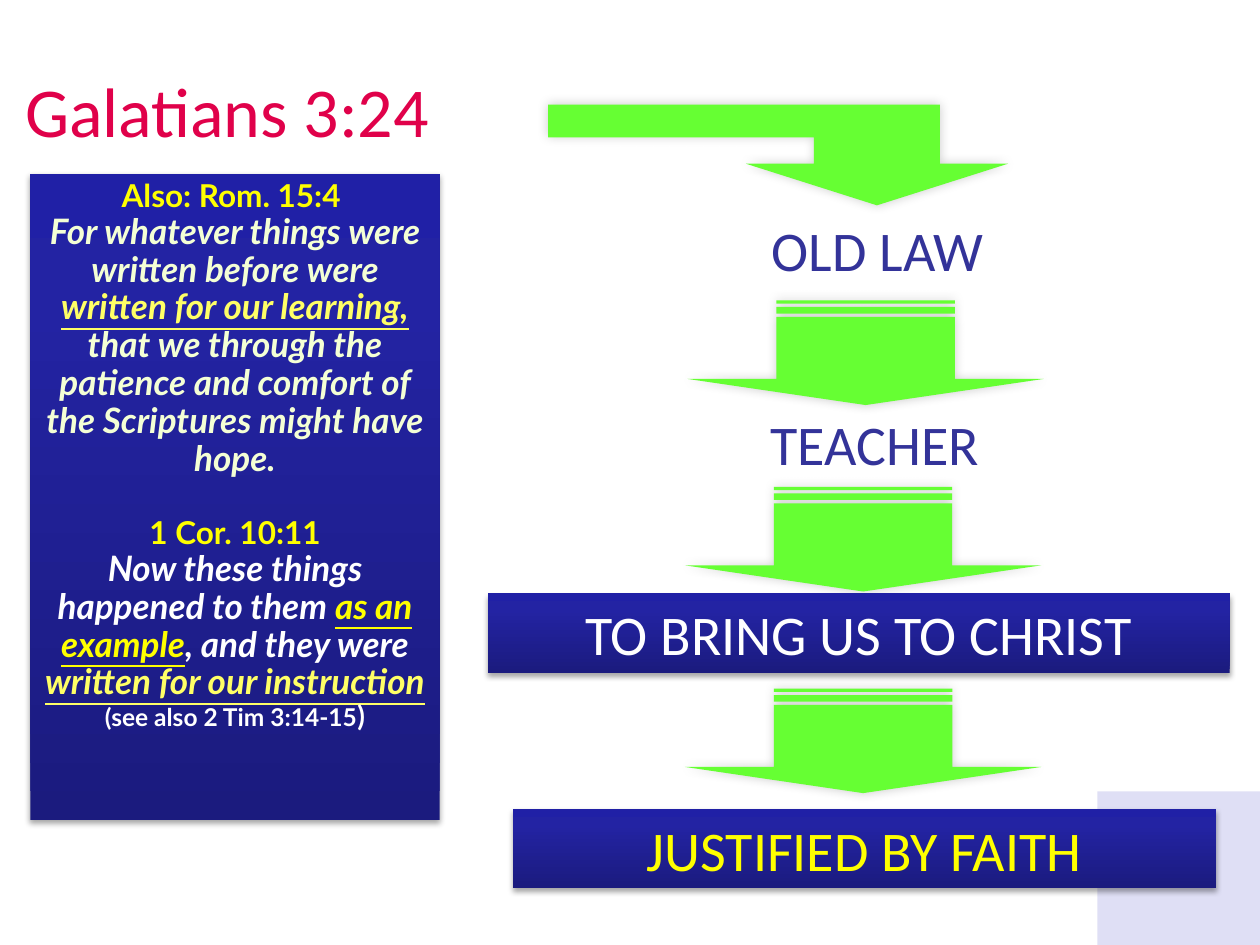
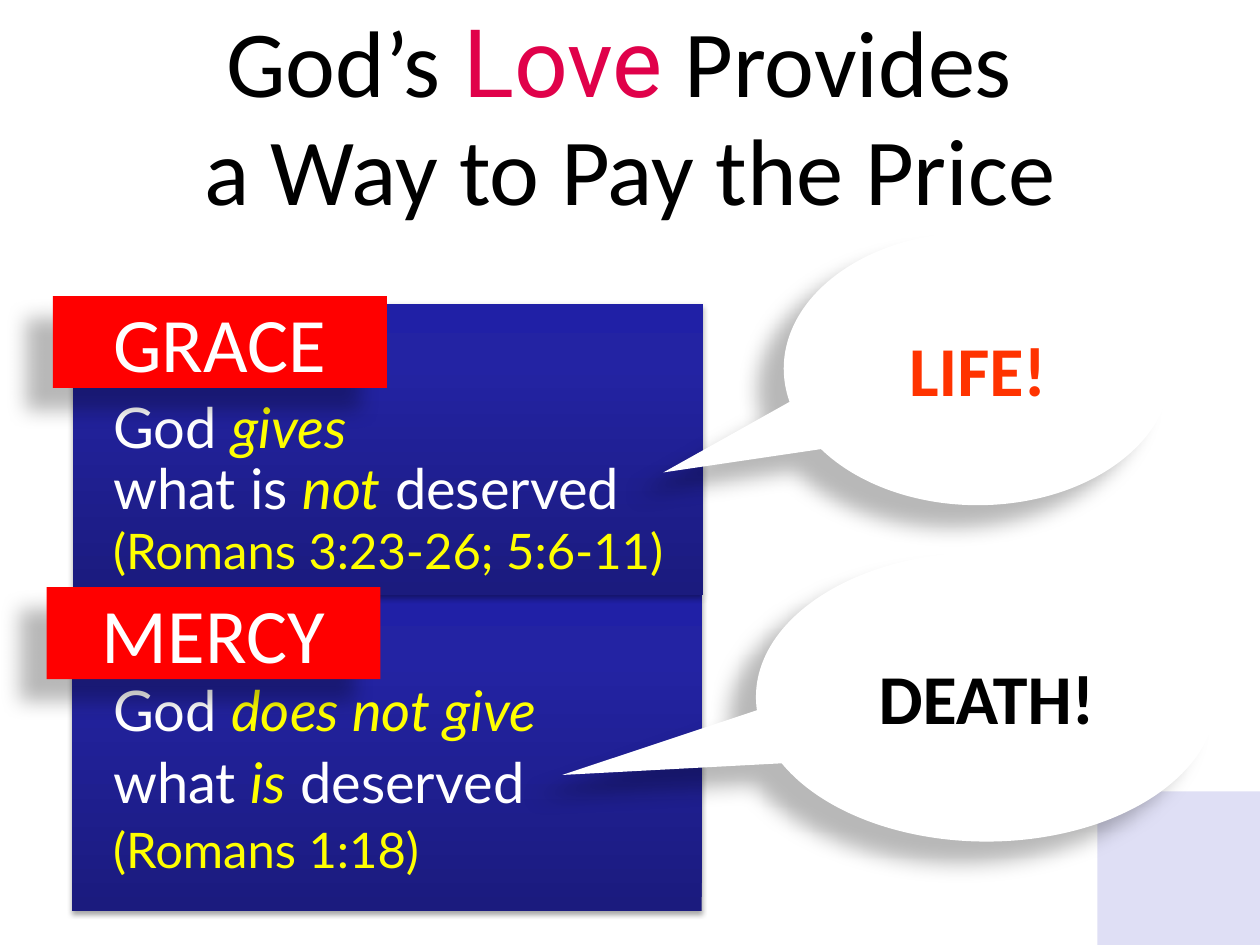
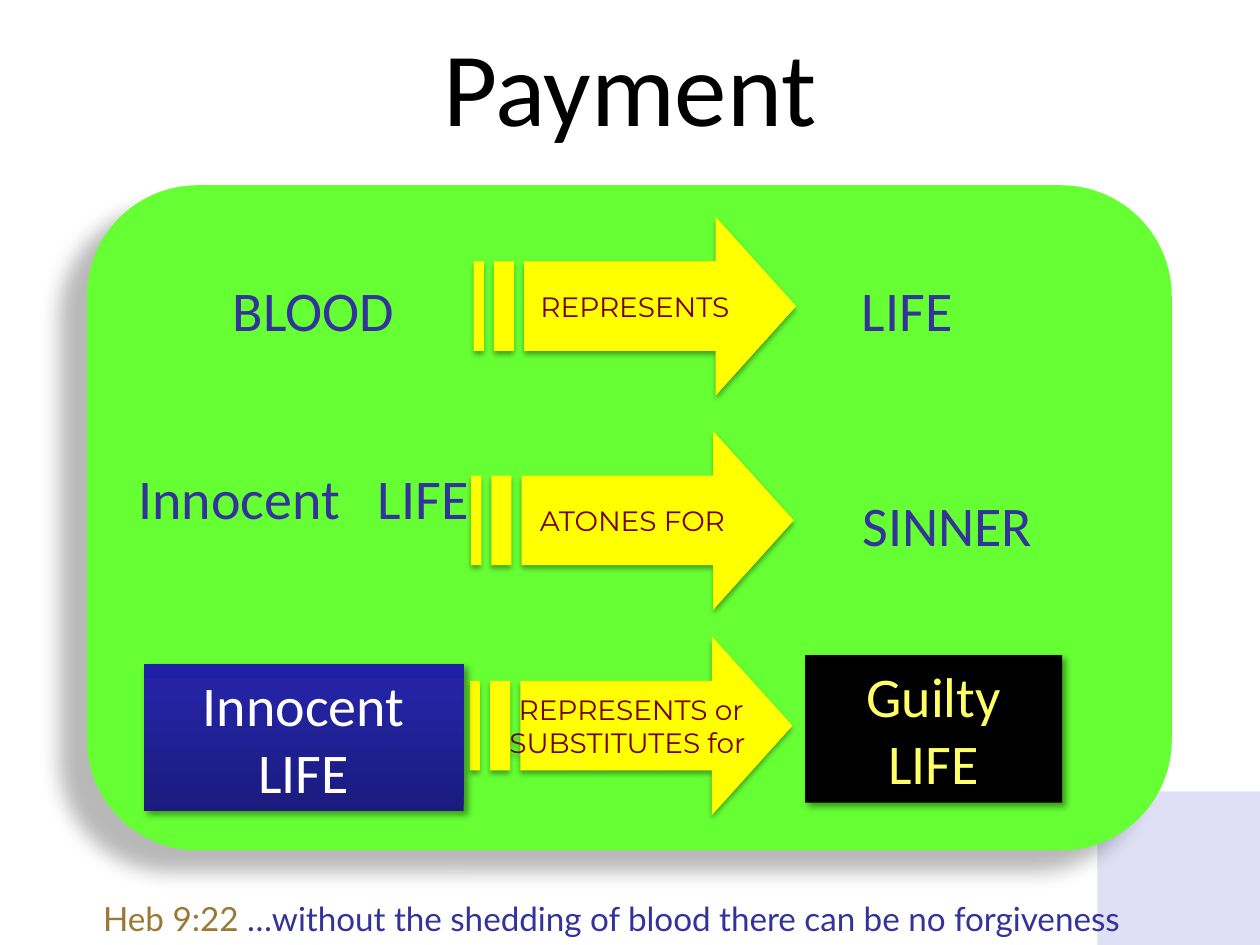
from lxml.etree import SubElement
from pptx import Presentation
from pptx.dml.color import RGBColor
from pptx.enum.shapes import MSO_SHAPE
from pptx.enum.text import MSO_ANCHOR, MSO_AUTO_SIZE, PP_ALIGN
from pptx.oxml.ns import qn
from pptx.util import Inches, Pt

WIDTH, HEIGHT = 10, 7.5
COLORS = {
    "white": "FFFFFF", "black": "000000", "corner": "DFDFF5", "green": "66FF33",
    "yellow": "FFFF00", "pale": "FFFF66", "cream": "F4FFD5", "crimson": "E0014A",
    "indigo": "333399", "red": "FF0000", "orange": "FF3300", "maroon": "760000",
    "gold": "997934",
}
NAVY = ((0, "1B1B7E"), (80, "2323A3"), (100, "2020A6"))
# Shadows: opacity %, blur pt, distance pt, direction in degrees
GLOW, SOFT, DEEP, CORNER = (20, 6, 0, 225), (35, 3.1, 1.8, 90), (28, 11.8, 19.7, 141), (40, 4, 3, 45)


# ---- Content: a run is (text, size, font, color, style); a paragraph is (space before, runs) ----
def line(text, size, font, color, style=""):
    return [(0, [(text, size, font, color, style)])]


def label(text, color="indigo"):
    return line(text, 32, "Calibri", color)


def lato(text, size, color, style=""):
    return text, size, "Lato", color, style


GALATIANS_TITLE = line("Galatians 3:24", 40, "Calibri", "crimson")
SCRIPTURES = [
    (0, [lato("Also: Rom. 15:4 ", 18, "yellow", "b")]),
    (0, [lato("For whatever things were written before were ", 20, "cream", "bi"),
         lato("written for our learning,", 20, "pale", "biu"),
         lato(" that we through the patience and comfort of the Scriptures might have hope.",
              20, "cream", "bi")]),
    (22, [lato("1 Cor. 10:11", 18, "yellow", "b")]),
    (0, [lato("Now these things happened to them ", 20, "white", "bi"),
         lato("as an example", 20, "yellow", "biu"),
         lato(", and they were ", 20, "white", "bi"),
         lato("written for our instruction", 20, "pale", "biu")]),
    (0, [lato("(see also 2 Tim 3:14-15", 14, "white", "b"), lato(")", 16, "white", "b")]),
]
LAW_LABELS = [("OLD LAW", (5.09, 1.66, 3.75, 0.63)), ("TEACHER", (5.07, 3.2, 3.75, 0.63))]
LAW_BANNERS = [("TO BRING US TO CHRIST", "white", (3.87, 4.71, 5.89, 0.63)),
               ("JUSTIFIED BY FAITH", "yellow", (4.07, 6.42, 5.58, 0.63))]
LAW_ARROW_CENTERS = [(6.87, 2.8), (6.85, 4.28), (6.85, 5.88)]
BENT_ARROW = [(6.96, 1.63), (5.92, 1.3), (6.46, 1.3), (6.46, 1.09), (4.35, 1.09),
              (4.35, 0.83), (7.46, 0.83), (7.46, 1.3), (8, 1.3)]

LOVE_TITLE = [(0, [("God’s", 54, "Calibri", "black", ""), (" Love", 54, "Roboto", "crimson", ""),
                   (" Provides \va Way to Pay the Price", 54, "Calibri", "black", "")])]
GIFTS = [
    {"panel": (0.58, 2.41, 5, 2.31), "tag": ("GRACE", (0.42, 2.35, 2.65, 0.73)),
     "text_box": (0.8, 3.13, 5, 1.55),
     "text": [(0, [lato("God ", 32, "white"), lato("gives", 32, "yellow", "i")]),
              (0, [lato("what is ", 32, "white"), lato("not", 32, "yellow", "i"),
                   lato(" deserved", 32, "white")]),
              (3, [lato("(Romans 3:23-26; 5:6-11)", 28, "yellow")])],
     "callout": ("LIFE!", "orange", (6.22, 1.84, 3.08, 2.17), (-0.81, 0.38))},
    {"panel": (0.57, 4.72, 5, 2.51), "tag": ("MERCY", (0.37, 4.66, 2.65, 0.73)),
     "text_box": (0.8, 5.37, 5, 1.8),
     "text": [(0, [lato("God ", 32, "white"), lato("does not give", 32, "yellow", "i")]),
              (7, [lato("what ", 32, "white"), lato("is", 32, "yellow", "i"),
                   lato(" deserved", 32, "white")]),
              (6, [lato("(Romans 1:18)", 28, "yellow")])],
     "callout": ("DEATH!", "black", (6, 4.38, 3.66, 2.3), (-0.92, 0.27))},
]

PAYMENT_TITLE = line("Payment", 60, "Calibri", "black")
PAYMENT_LABELS = [("BLOOD", (0.96, 2.14, 3.06, 0.63)), ("LIFE", (5.67, 2.14, 3.06, 0.63)),
                  ("SINNER", (5.99, 3.84, 3.06, 0.63))]
PAYMENT_ARROWS = [(["REPRESENTS"], (5.04, 2.43)), (["ATONES FOR"], (5.02, 4.13)),
                  (["REPRESENTS or", "SUBSTITUTES for "], (5.01, 5.76))]
HEBREWS = [(0, [lato("Heb 9:22 ", 19, "gold"),
                lato("…without the shedding of blood there can be no forgiveness", 19, "indigo")])]


# ---- Helpers ----
def inches(box):
    return [Inches(value) for value in box]


def write(shape, paragraphs, align=PP_ALIGN.CENTER, anchor=MSO_ANCHOR.TOP, wrap=True, spacing=None):
    frame = shape.text_frame
    frame.word_wrap, frame.vertical_anchor = wrap, anchor
    frame.auto_size = MSO_AUTO_SIZE.NONE
    for index, (space_before, runs) in enumerate(paragraphs):
        paragraph = frame.add_paragraph() if index else frame.paragraphs[0]
        paragraph.alignment = align
        if space_before:
            paragraph.space_before = Pt(space_before)
        if spacing:
            paragraph.line_spacing = spacing
        for text, size, font, color, style in runs:
            for part_index, part in enumerate(text.split("\v")):
                if part_index:
                    paragraph.add_line_break()
                run = paragraph.add_run()
                run.text = part
                run.font.name, run.font.size = font, Pt(size)
                run.font.color.rgb = RGBColor.from_string(COLORS[color])
                run.font.bold, run.font.italic = "b" in style, "i" in style
                run.font.underline = "u" in style


def paint(shape, fill, shadow=None):
    """Fill with a named color or gradient stops, drop the outline, add a shadow."""
    properties = shape._element.spPr
    if isinstance(fill, str):
        shape.fill.solid()
        shape.fill.fore_color.rgb = RGBColor.from_string(COLORS[fill])
    else:
        shape.fill.gradient()
        shape.fill.gradient_angle = 90
        stops = properties.find(qn("a:gradFill")).find(qn("a:gsLst"))
        for stop in list(stops):
            stops.remove(stop)
        for position, color in fill:
            stop = SubElement(stops, qn("a:gs"), pos=str(position * 1000))
            SubElement(stop, qn("a:srgbClr"), val=color)
    shape.line.fill.background()
    shape.shadow.inherit = False
    if shadow:
        opacity, blur, distance, direction = shadow
        outer = SubElement(properties.find(qn("a:effectLst")), qn("a:outerShdw"),
                           blurRad=str(Pt(blur)), dist=str(Pt(distance)),
                           dir=str(direction * 60000), algn="ctr", rotWithShape="0")
        color = SubElement(outer, qn("a:srgbClr"), val=COLORS["black"])
        SubElement(color, qn("a:alpha"), val=str(opacity * 1000))


def add_preset(slide, preset, box, fill, shadow=None):
    shape = slide.shapes.add_shape(preset, *inches(box))
    paint(shape, fill, shadow)
    return shape


def add_box(slide, box, fill, shadow=None):
    return add_preset(slide, MSO_SHAPE.RECTANGLE, box, fill, shadow)


def add_text(slide, box, paragraphs, **options):
    shape = slide.shapes.add_textbox(*inches(box))
    write(shape, paragraphs, **options)
    return shape


def add_outline(slide, contours, fill, shadow):
    contours = [[inches(point) for point in contour] for contour in contours]
    builder = slide.shapes.build_freeform(*contours[0][0], scale=1.0)
    for index, contour in enumerate(contours):
        if index:
            builder.move_to(*contour[0])
        builder.add_line_segments(contour[1:], close=True)
    shape = builder.convert_to_shape()
    paint(shape, fill, shadow)
    return shape


def add_striped_arrow(slide, center, length, breadth, fill, shadow):
    """Arrow with two tail stripes, drawn pointing right around its center."""
    left, top = center[0] - length / 2, center[1] - breadth / 2

    def bar(start, end):
        return [(start, 0.25), (start, 0.75), (end, 0.75), (end, 0.25)]

    head = [(0.75, 0), (0.75, 0.25), (5 / 32, 0.25), (5 / 32, 0.75), (0.75, 0.75), (0.75, 1), (1, 0.5)]
    contours = [[(left + x * length, top + y * breadth) for x, y in contour]
                for contour in (head, bar(1 / 16, 1 / 8), bar(0, 1 / 32))]
    return add_outline(slide, contours, fill, shadow)


def new_slide(presentation, title_text, title_box, align=PP_ALIGN.CENTER):
    slide = presentation.slides.add_slide(presentation.slide_layouts[5])
    add_box(slide, (8.71, 6.28, WIDTH - 8.71, HEIGHT - 6.28), "corner")
    title = slide.shapes.title
    title.left, title.top, title.width, title.height = inches(title_box)
    frame = title.text_frame
    frame.margin_left = frame.margin_right = frame.margin_top = frame.margin_bottom = 0
    write(title, title_text, align, MSO_ANCHOR.MIDDLE, spacing=0.95)
    return slide


# ---- Slides ----
def build_galatians(presentation):
    slide = new_slide(presentation, GALATIANS_TITLE, (0.2, 0.28, 9.8, 1.25), PP_ALIGN.LEFT)
    for center in LAW_ARROW_CENTERS:
        add_striped_arrow(slide, center, 0.83, 2.83, "green", GLOW).rotation = 90
    add_outline(slide, [BENT_ARROW], "green", GLOW)
    for text, box in LAW_LABELS:
        add_text(slide, box, label(text))
    for text, color, box in LAW_BANNERS:
        write(add_box(slide, box, NAVY, SOFT), label(text, color))
    write(add_box(slide, (0.24, 1.38, 3.25, 5.13), NAVY, SOFT), SCRIPTURES, spacing=0.9)


def build_love(presentation):
    slide = new_slide(presentation, LOVE_TITLE, (0, 0.32, WIDTH, 1.25))
    for gift in reversed(GIFTS):
        add_box(slide, gift["panel"], NAVY, SOFT)
    for gift in GIFTS:
        add_text(slide, gift["text_box"], gift["text"], align=PP_ALIGN.LEFT, spacing=0.9)
    for gift in GIFTS:
        text, color, box, tail = gift["callout"]
        callout = add_preset(slide, MSO_SHAPE.OVAL_CALLOUT, box, "white", DEEP)
        callout.adjustments[0], callout.adjustments[1] = tail
        write(callout, line(text, 40, "Calibri", color, "b"), anchor=MSO_ANCHOR.MIDDLE)
    for gift in GIFTS:
        text, box = gift["tag"]
        write(add_box(slide, box, "red", DEEP), line(text, 44, "Calibri", "white"),
              anchor=MSO_ANCHOR.MIDDLE, wrap=False)


def build_payment(presentation):
    slide = new_slide(presentation, PAYMENT_TITLE, (0, 0.09, WIDTH, 1.25))
    add_preset(slide, MSO_SHAPE.ROUNDED_RECTANGLE, (0.69, 1.47, 8.61, 5.28), "green", DEEP)
    for text, box in PAYMENT_LABELS:
        add_text(slide, box, label(text))
    # The innocent life label keeps its gap with a tab stop
    innocent = add_text(slide, (1, 3.63, 3.06, 1.17), label("Innocent\tLIFE"), align=PP_ALIGN.LEFT)
    tabs = SubElement(innocent.text_frame.paragraphs[0]._p.get_or_add_pPr(), qn("a:tabLst"))
    SubElement(tabs, qn("a:tab"), pos=str(Inches(1.9)), algn="l")
    for lines, center in PAYMENT_ARROWS:
        arrow = add_striped_arrow(slide, center, 2.56, 1.42, "yellow", SOFT)
        paragraphs = [line(text, 16, "Montserrat", "maroon")[0] for text in lines]
        write(arrow, paragraphs, anchor=MSO_ANCHOR.MIDDLE, wrap=False)
    write(add_box(slide, (1.14, 5.27, 2.54, 1.17), NAVY, CORNER), label("Innocent LIFE", "white"))
    write(add_box(slide, (6.39, 5.2, 2.04, 1.17), "black", CORNER), label("Guilty LIFE", "pale"))
    add_text(slide, (0, 7.08, 9.71, 0.42), HEBREWS)


def main():
    presentation = Presentation()
    presentation.slide_width, presentation.slide_height = Inches(WIDTH), Inches(HEIGHT)
    build_galatians(presentation)
    build_love(presentation)
    build_payment(presentation)
    presentation.save("out.pptx")


if __name__ == "__main__":
    main()
